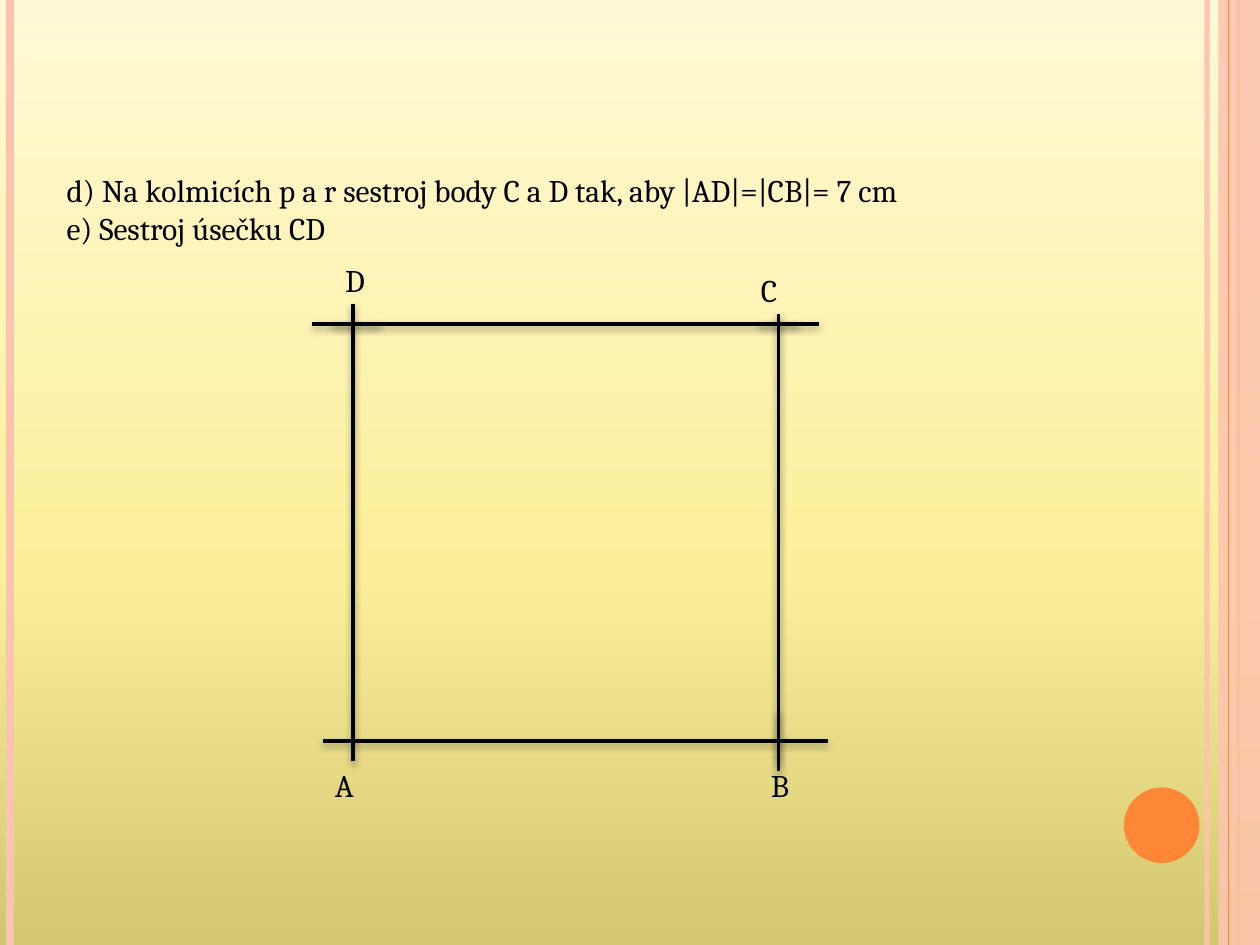
from lxml.etree import SubElement
from pptx import Presentation
from pptx.dml.color import RGBColor
from pptx.enum.shapes import MSO_CONNECTOR, MSO_SHAPE
from pptx.enum.text import MSO_AUTO_SIZE
from pptx.oxml import parse_xml
from pptx.oxml.ns import nsdecls, qn
from pptx.util import Inches, Pt

BLACK = RGBColor(0x00, 0x00, 0x00)
ORANGE = RGBColor(0xFE, 0x86, 0x37)
PINK = RGBColor(0xFE, 0xC3, 0xAE)
BACKGROUND_STOPS = [
    (0, RGBColor(0xD3, 0xC7, 0x72)),
    (40, RGBColor(0xFC, 0xEF, 0x9B)),
    (100, RGBColor(0xFF, 0xF9, 0xD5)),
]

prs = Presentation()
prs.slide_width, prs.slide_height = Inches(10), Inches(7.5)
slide = prs.slides.add_slide(prs.slide_layouts[6])


def add_line(x1, y1, x2, y2, color, width, shadow=False):
    line = slide.shapes.add_connector(
        MSO_CONNECTOR.STRAIGHT, Inches(x1), Inches(y1), Inches(x2), Inches(y2))
    line.line.color.rgb = color
    line.line.width = Pt(width)
    effects = SubElement(line._element.spPr, qn("a:effectLst"))
    if shadow:
        effects.append(parse_xml(
            f'<a:outerShdw {nsdecls("a")} blurRad="{Pt(4)}" dist="{Pt(2)}" '
            'dir="5400000" rotWithShape="0"><a:srgbClr val="000000">'
            '<a:alpha val="40000"/></a:srgbClr></a:outerShdw>'))
    return line


def add_text(left, top, width, height, lines):
    box = slide.shapes.add_textbox(
        Inches(left), Inches(top), Inches(width), Inches(height))
    frame = box.text_frame
    frame.word_wrap = True
    frame.auto_size = MSO_AUTO_SIZE.SHAPE_TO_FIT_TEXT
    frame.text = "\n".join(lines)
    for paragraph in frame.paragraphs:
        for run in paragraph.runs:
            run.font.name = "Cambria"
            run.font.size = Pt(18)
            run.font.color.rgb = BLACK


# Background gradient, running from bottom to top
background = slide.background.fill
background.gradient()
background.gradient_angle = 90
stop_list = slide.background._cSld.find(".//" + qn("a:gsLst"))
stop_list.clear()
for position, color in BACKGROUND_STOPS:
    stop = SubElement(stop_list, qn("a:gs"), pos=str(position * 1000))
    SubElement(stop, qn("a:srgbClr"), val=str(color))

# Side stripes, band and circle
right_stripe = add_line(9.58, 0, 9.58, 7.5, PINK, 3)
add_line(0.08, 0, 0.08, 7.5, PINK, 4.5)
add_line(9.83, 0, 9.83, 7.5, ORANGE, 1.5)
band = slide.shapes.add_shape(
    MSO_SHAPE.RECTANGLE, Inches(9.67), 0, Inches(0.33), Inches(7.5))
add_line(9.75, 0, 9.75, 7.5, ORANGE, 0.75)
circle = slide.shapes.add_shape(
    MSO_SHAPE.OVAL, Inches(8.92), Inches(6.25), Inches(0.6), Inches(0.6))
for decoration, color in [(band, PINK), (circle, ORANGE)]:
    decoration.shadow.inherit = False
    decoration.fill.solid()
    decoration.fill.fore_color.rgb = color
    decoration.line.fill.background()
for translucent, opacity in [(right_stripe, 93), (band, 87)]:
    color_element = translucent._element.spPr.find(".//" + qn("a:srgbClr"))
    SubElement(color_element, qn("a:alpha"), val=str(opacity * 1000))

# Construction steps
add_text(0.43, 1.31, 8.5, 0.71, [
    "d) Na kolmicích p a r sestroj body C a D tak, aby |AD|=|CB|= 7 cm",
    "e) Sestroj úsečku CD",
])

# Square ABCD: its sides and the short marks at B, D and C
LEFT, RIGHT, TOP, BOTTOM = 2.8, 6.18, 2.57, 5.88
for x1, y1, x2, y2 in [
    (2.56, BOTTOM, 6.57, BOTTOM),
    (RIGHT, 5.64, RIGHT, 6.03),
    (LEFT, 6.04, LEFT, 2.41),
    (RIGHT, 6.12, RIGHT, 2.49),
    (2.48, TOP, 6.5, TOP),
    (2.64, TOP, 3.03, TOP),
    (6.02, TOP, 6.34, TOP),
]:
    add_line(x1, y1, x2, y2, BLACK, 2, shadow=True)

# Vertex labels
for vertex, left, top, width in [
    ("A", 2.56, 6.03, 0.39),
    ("B", 6.02, 6.03, 0.39),
    ("D", 2.64, 2.02, 0.47),
    ("C", 5.94, 2.1, 0.39),
]:
    add_text(left, top, width, 0.4, [vertex])

prs.save("out.pptx")
